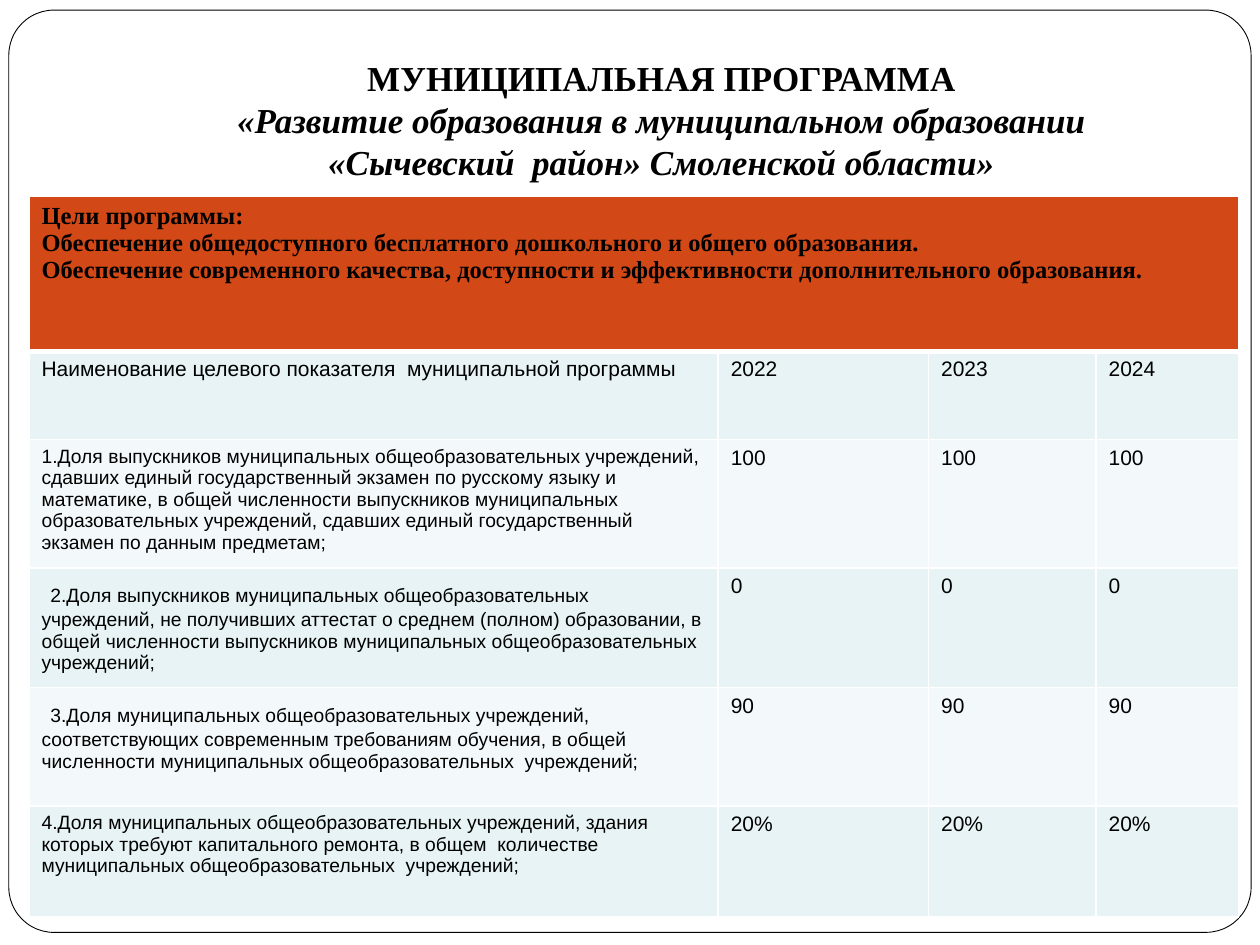
from pptx import Presentation
from pptx.dml.color import RGBColor
from pptx.enum.shapes import MSO_SHAPE
from pptx.enum.text import MSO_ANCHOR, PP_ALIGN
from pptx.oxml.ns import qn
from pptx.util import Inches, Pt
from lxml import etree

ROUNDED = MSO_SHAPE.ROUNDED_RECTANGLE
BOTTOM = MSO_ANCHOR.BOTTOM
CENTER = PP_ALIGN.CENTER

COLORS = {"text": "000000", "paper": "FFFFFF", "goals": "D34817",
          "band": "E7F3F4", "light": "F3F9FA"}
FORMATS = {
    "title": {"name": "Times New Roman", "size": Pt(20), "bold": True},
    "subtitle": {"name": "Times New Roman", "size": Pt(20), "bold": True, "italic": True},
    "goals": {"name": "Times New Roman", "size": Pt(14), "bold": True},
    "value": {"name": "Arial", "size": Pt(12), "bold": False},
    "indicator": {"name": "Arial", "size": Pt(11), "bold": False},
    "indent": {"name": "Arial", "size": Pt(18), "bold": False},
}
TITLE = [
    ("МУНИЦИПАЛЬНАЯ ПРОГРАММА", "title"),
    ("«Развитие образования в муниципальном образовании", "subtitle"),
    ("«Сычевский  район» Смоленской области»", "subtitle"),
]
GOALS = [
    "Цели программы:",
    "Обеспечение общедоступного бесплатного дошкольного и общего образования.",
    "Обеспечение современного качества, доступности и эффективности дополнительного образования.",
]
HEADINGS = ["Наименование целевого показателя  муниципальной программы", "2022", "2023", "2024"]
INDICATORS = [
    ("1.Доля выпускников муниципальных общеобразовательных учреждений, сдавших единый "
     "государственный экзамен по русскому языку и математике, в общей численности выпускников "
     "муниципальных образовательных учреждений, сдавших единый государственный экзамен по "
     "данным предметам;", "100", False),
    ("2.Доля выпускников муниципальных общеобразовательных учреждений, не получивших аттестат "
     "о среднем (полном) образовании, в общей численности выпускников муниципальных "
     "общеобразовательных  учреждений;", "0", True),
    ("3.Доля муниципальных общеобразовательных учреждений, соответствующих современным "
     "требованиям обучения, в общей численности муниципальных общеобразовательных  "
     "учреждений;", "90", True),
    ("4.Доля муниципальных общеобразовательных учреждений, здания которых требуют капитального "
     "ремонта, в общем  количестве муниципальных общеобразовательных  учреждений;", "20%", False),
]
COLUMN_WIDTHS = [5.47, 1.67, 1.33, 1.13]
ROW_HEIGHTS = [1.23, 0.7, 1.01, 0.94, 0.94, 0.88]


class SlideBuilder:
    """Draws styled elements on the current slide."""

    def __init__(self, slide):
        self.slide = slide

    def color(self, name):
        return RGBColor.from_string(COLORS[name])

    def run(self, paragraph, text, style):
        run = paragraph.add_run()
        run.text = text
        for attribute, value in FORMATS[style].items():
            setattr(run.font, attribute, value)
        run.font.color.rgb = self.color("text")

    def frame(self, left, top, width, height):
        border = self.slide.shapes.add_shape(
            ROUNDED, Inches(left), Inches(top), Inches(width), Inches(height))
        border.adjustments[0] = 0.049
        border.shadow.inherit = False
        border.fill.solid()
        border.fill.fore_color.rgb = self.color("paper")
        border.line.color.rgb = self.color("text")
        border.line.width = Pt(0.5)

    def title(self, left, top, width, height, lines):
        heading = self.slide.shapes.add_textbox(
            Inches(left), Inches(top), Inches(width), Inches(height)).text_frame
        layout = {"word_wrap": True, "vertical_anchor": BOTTOM, "margin_bottom": Inches(0.1)}
        for attribute, value in layout.items():
            setattr(heading, attribute, value)
        paragraph = heading.paragraphs[0]
        paragraph.alignment = CENTER
        for index, (text, style) in enumerate(lines):
            if index:
                paragraph.add_line_break()
            self.run(paragraph, text, style)

    def cell(self, cell, paragraphs, fill, top=1, bottom=1):
        properties = cell._tc.get_or_add_tcPr()
        for side, width in {"L": 1, "R": 1, "T": top, "B": bottom}.items():
            edge = etree.SubElement(properties, qn(f"a:ln{side}"), w=str(Pt(width)))
            solid = etree.SubElement(edge, qn("a:solidFill"))
            etree.SubElement(solid, qn("a:srgbClr"), val=COLORS["paper"])
        cell.fill.solid()
        cell.fill.fore_color.rgb = self.color(fill)
        for index, runs in enumerate(paragraphs):
            frame = cell.text_frame
            paragraph = frame.add_paragraph() if index else frame.paragraphs[0]
            for text, style in runs:
                self.run(paragraph, text, style)

    def table(self, left, top, widths, heights):
        table = self.slide.shapes.add_table(
            len(heights), len(widths), Inches(left), Inches(top),
            Inches(sum(widths)), Inches(sum(heights))).table
        for column, width in zip(table.columns, widths):
            column.width = Inches(width)
        for row, height in zip(table.rows, heights):
            row.height = Inches(height)
        return table


def main():
    deck = Presentation()
    deck.slide_width, deck.slide_height = Inches(10), Inches(7.5)
    builder = SlideBuilder(deck.slides.add_slide(deck.slide_layouts[6]))
    builder.frame(0.07, 0.08, 9.86, 7.32)
    builder.title(1, 0.3, 8.5, 1.25, TITLE)

    program = builder.table(0.23, 1.56, COLUMN_WIDTHS, ROW_HEIGHTS)
    program.cell(0, 0).merge(program.cell(0, 3))
    for column in range(len(COLUMN_WIDTHS)):
        goals = [[(goal, "goals")] for goal in GOALS] if column == 0 else []
        builder.cell(program.cell(0, column), goals, "goals", bottom=3)
        builder.cell(program.cell(1, column), [[(HEADINGS[column], "value")]], "band", top=3)

    for row, (indicator, value, indented) in enumerate(INDICATORS, start=2):
        fill = "light" if row % 2 == 0 else "band"
        indent = [(" ", "indent")] if indented else []
        builder.cell(program.cell(row, 0), [indent + [(indicator, "indicator")]], fill)
        for column in range(1, len(COLUMN_WIDTHS)):
            builder.cell(program.cell(row, column), [[(value, "value")]], fill)

    deck.save("out.pptx")


if __name__ == "__main__":
    main()
